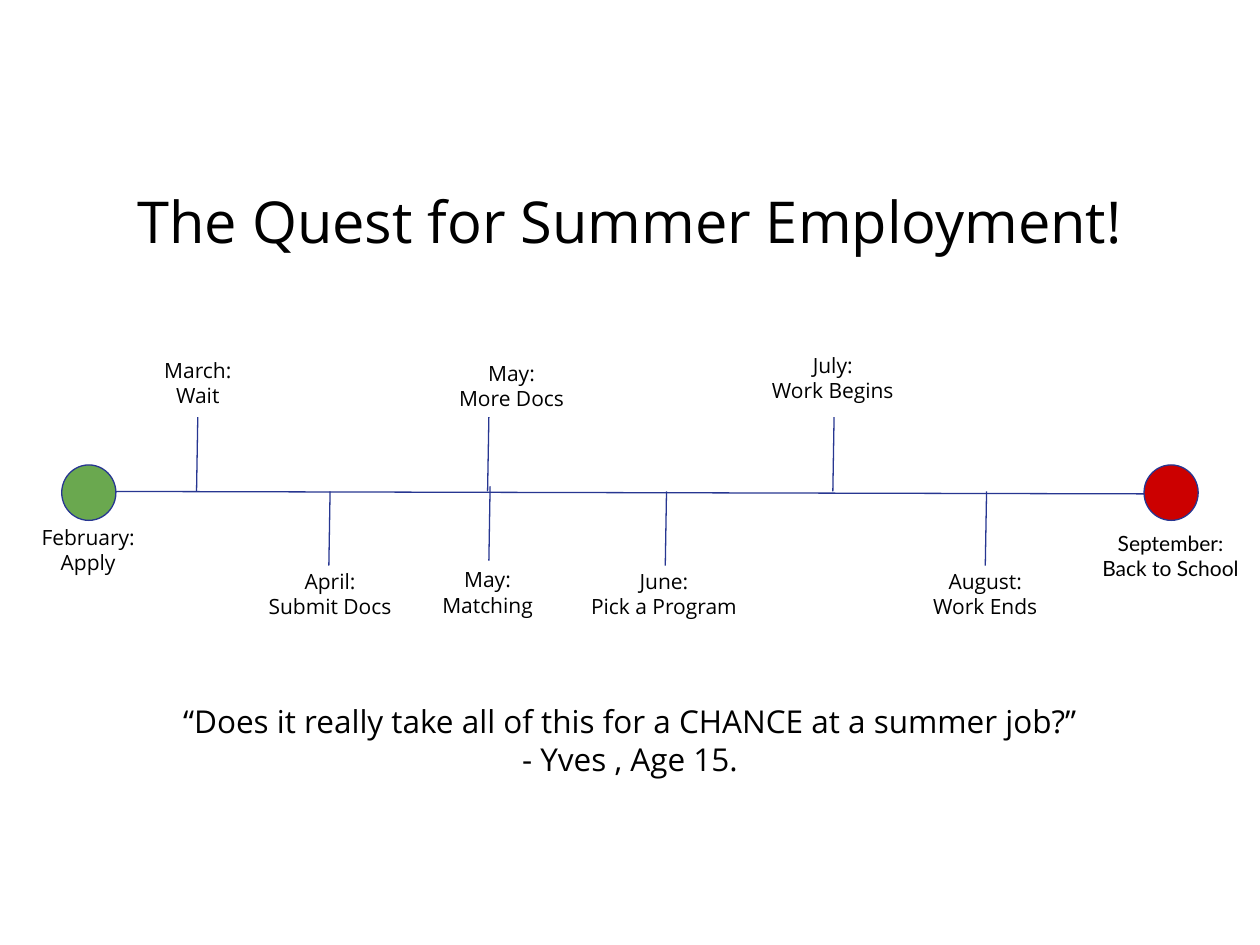
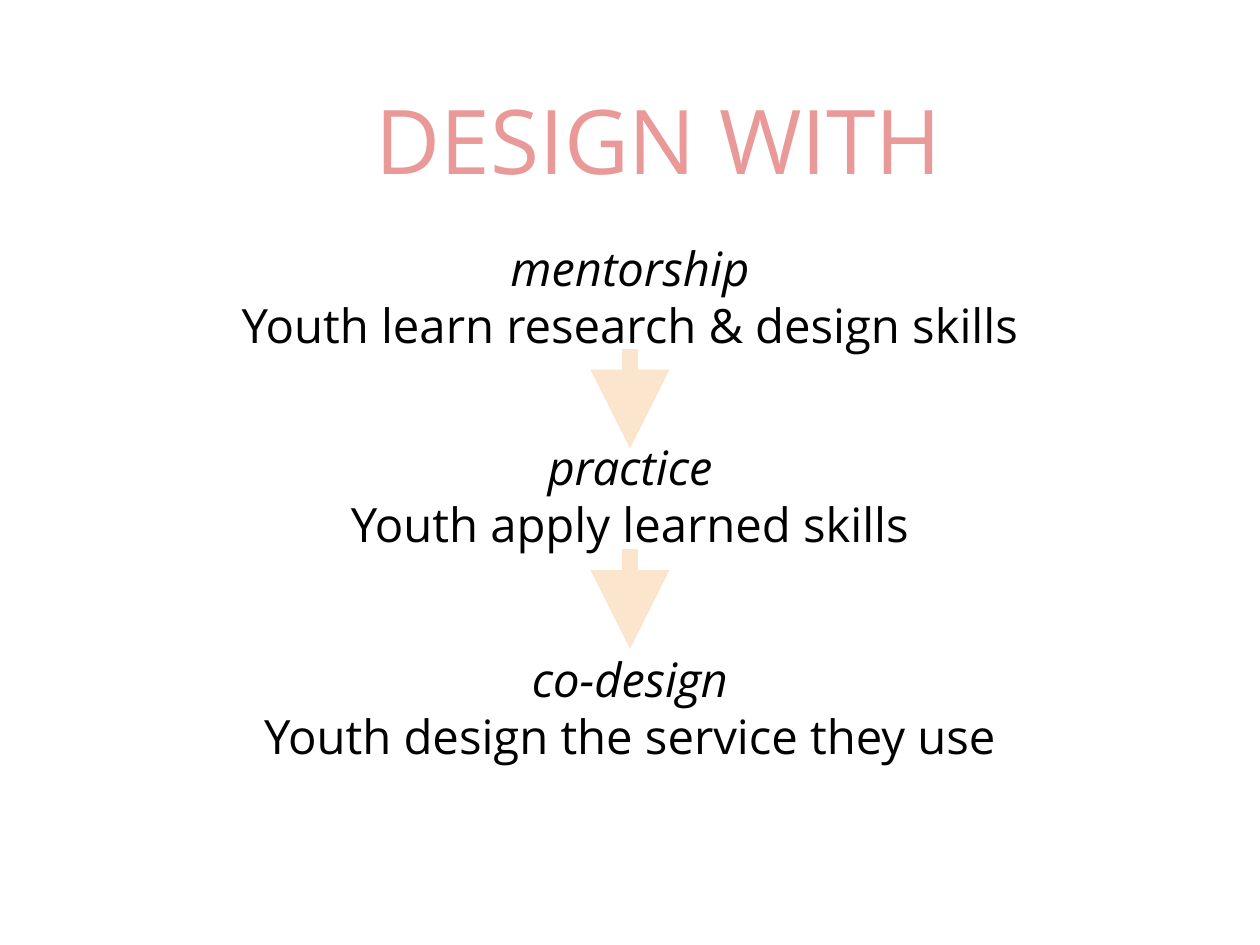
import pptx
import pptx.dml.color
import pptx.enum.shapes
import pptx.enum.text
import pptx.oxml
import pptx.oxml.ns
import pptx.util

Inches = pptx.util.Inches
Pt = pptx.util.Pt
ANCHOR = pptx.enum.text.MSO_ANCHOR

WIDTH, HEIGHT = 10, 7.5
CENTER = WIDTH / 2
INSET = 0.07
FONT, END_FONT = "Open Sans", "Lato"
BLACK, NAVY, GREEN, RED = "000000", "273691", "6AA84F", "CC0000"
PINK, PEACH = "EA9999", "FCE5CD"

# Timeline: text, font, label centre x, label middle y, label width, label height
LABELS = [
    (("February:", "Apply"), FONT, 0.7, 4.36, 1.25, 0.84),
    (("March:", "Wait"), FONT, 1.57, 3.04, 0.85, 0.44),
    (("April:", "Submit Docs"), FONT, 2.62, 4.71, 1.14, 0.44),
    (("May:", "More Docs"), FONT, 4.06, 3.06, 1.14, 0.44),
    (("May:", "Matching"), FONT, 3.87, 4.7, 1.14, 0.44),
    (("June:", "Pick a Program"), FONT, 5.27, 4.71, 1.56, 0.44),
    (("July:", "Work Begins"), FONT, 6.61, 3, 1.36, 0.44),
    (("August:", "Work Ends"), FONT, 7.82, 4.71, 1.25, 0.44),
    (("September:", "Back to School"), END_FONT, 9.29, 4.41, 1.25, 0.44),
]
# Stems: x at the foot, y at the foot; each rises by the same amount
AXIS_Y, STEM_RISE, STEM_LEAN = 3.9, 0.59, 0.01
STEMS_ABOVE = [1.56, 3.87, 6.61]
STEMS_BELOW = [2.61, 5.28, 7.82]
MATCHING_STEM = (3.88, 4.45)
STEMS = (
    [(x, AXIS_Y) for x in STEMS_ABOVE]
    + [(x, AXIS_Y + STEM_RISE) for x in STEMS_BELOW]
    + [MATCHING_STEM]
)
ENDPOINTS = [(0.49, GREEN), (9.08, RED)]
QUOTE = ("“Does it really take all of this for a CHANCE at a summer job?”", "- Yves , Age 15.")

# Steps: name, description, top, width
STEPS = [
    ("mentorship", "Youth learn research & design skills", 1.83, 6.43),
    ("practice", "Youth apply learned skills", 3.41, 6.43),
    ("co-design", "Youth design the service they use", 5.09, 6.84),
]
STEP_HEIGHT = 1.18
ARROW_TOPS = [2.77, 4.36]
ARROW_LENGTH = 0.79


def color(hex_string):
    return pptx.dml.color.RGBColor.from_string(hex_string)


def write(shape, lines, size, font=FONT, hex_string=BLACK, anchor=ANCHOR.MIDDLE,
          spacing=1.0, italic_first=False):
    """Fill a shape with centred lines, one paragraph each."""
    frame = shape.text_frame
    frame.word_wrap = True
    frame.auto_size = pptx.enum.text.MSO_AUTO_SIZE.NONE
    frame.vertical_anchor = anchor
    frame.margin_left = frame.margin_right = Inches(INSET)
    frame.margin_top = frame.margin_bottom = Inches(INSET)
    for index, line in enumerate(lines):
        paragraph = frame.add_paragraph() if index else frame.paragraphs[0]
        paragraph.alignment = pptx.enum.text.PP_ALIGN.CENTER
        paragraph.line_spacing = spacing
        paragraph.space_before = paragraph.space_after = Pt(0)
        run = paragraph.add_run()
        run.text = line
        run.font.name = font
        run.font.size = Pt(size)
        run.font.color.rgb = color(hex_string)
        run.font.italic = italic_first and index == 0


def add_text(slide, lines, left, top, width, height, size, **style):
    box = slide.shapes.add_textbox(Inches(left), Inches(top), Inches(width), Inches(height))
    write(box, lines, size, **style)


def append_element(parent, tag, attributes=""):
    namespace = pptx.oxml.ns.nsdecls("a")
    parent.append(pptx.oxml.parse_xml(f"<a:{tag} {namespace} {attributes}/>"))


def add_line(slide, start, end, hex_string=NAVY, weight=0.75, arrow=False):
    points = [Inches(value) for value in (*start, *end)]
    line = slide.shapes.add_connector(pptx.enum.shapes.MSO_CONNECTOR.STRAIGHT, *points)
    line.line.color.rgb = color(hex_string)
    line.line.width = Pt(weight)
    properties = line._element.spPr
    if arrow:
        outline = properties.find(pptx.oxml.ns.qn("a:ln"))
        append_element(outline, "tailEnd", 'type="triangle" w="lg" len="lg"')
    append_element(properties, "effectLst")


def add_titled_slide(presentation, title, box, size, **style):
    slide = presentation.slides.add_slide(presentation.slide_layouts[5])
    shape = slide.shapes.title
    shape.left, shape.top, shape.width, shape.height = map(Inches, box)
    write(shape, [title], size, **style)
    return slide


def build_timeline(presentation):
    slide = add_titled_slide(presentation, "The Quest for Summer Employment!",
                             (0.69, 1.24, 8.62, 1.09), 33, spacing=0.9)
    add_line(slide, (0.76, AXIS_Y), (9.1, AXIS_Y + 0.02))
    for left, fill in ENDPOINTS:
        dot = slide.shapes.add_shape(pptx.enum.shapes.MSO_SHAPE.OVAL, Inches(left),
                                     Inches(3.69), Inches(0.43), Inches(0.44))
        dot.shadow.inherit = False
        dot.fill.solid()
        dot.fill.fore_color.rgb = color(fill)
        dot.line.color.rgb = color(NAVY)
        dot.line.width = Pt(0.75)
    for x, foot in STEMS:
        add_line(slide, (x, foot), (x + STEM_LEAN, foot - STEM_RISE))
    for lines, font, center, middle, width, height in LABELS:
        add_text(slide, lines, center - width / 2, middle - height / 2, width, height,
                 12, font=font)
    add_text(slide, QUOTE, 0.69, 5.5, 8.62, 0.77, 18, anchor=ANCHOR.TOP)


def build_steps(presentation):
    slide = add_titled_slide(presentation, "DESIGN WITH", (0.82, 0.15, 8.82, 1.91), 51,
                             hex_string=PINK)
    for top in ARROW_TOPS:
        add_line(slide, (CENTER, top), (CENTER, top + ARROW_LENGTH), PEACH, 9, arrow=True)
    for name, description, top, width in STEPS:
        add_text(slide, (name, description), CENTER - width / 2, top, width, STEP_HEIGHT,
                 27, anchor=ANCHOR.TOP, italic_first=True)


def main():
    presentation = pptx.Presentation()
    presentation.slide_width, presentation.slide_height = Inches(WIDTH), Inches(HEIGHT)
    build_timeline(presentation)
    build_steps(presentation)
    presentation.save("out.pptx")


if __name__ == "__main__":
    main()
